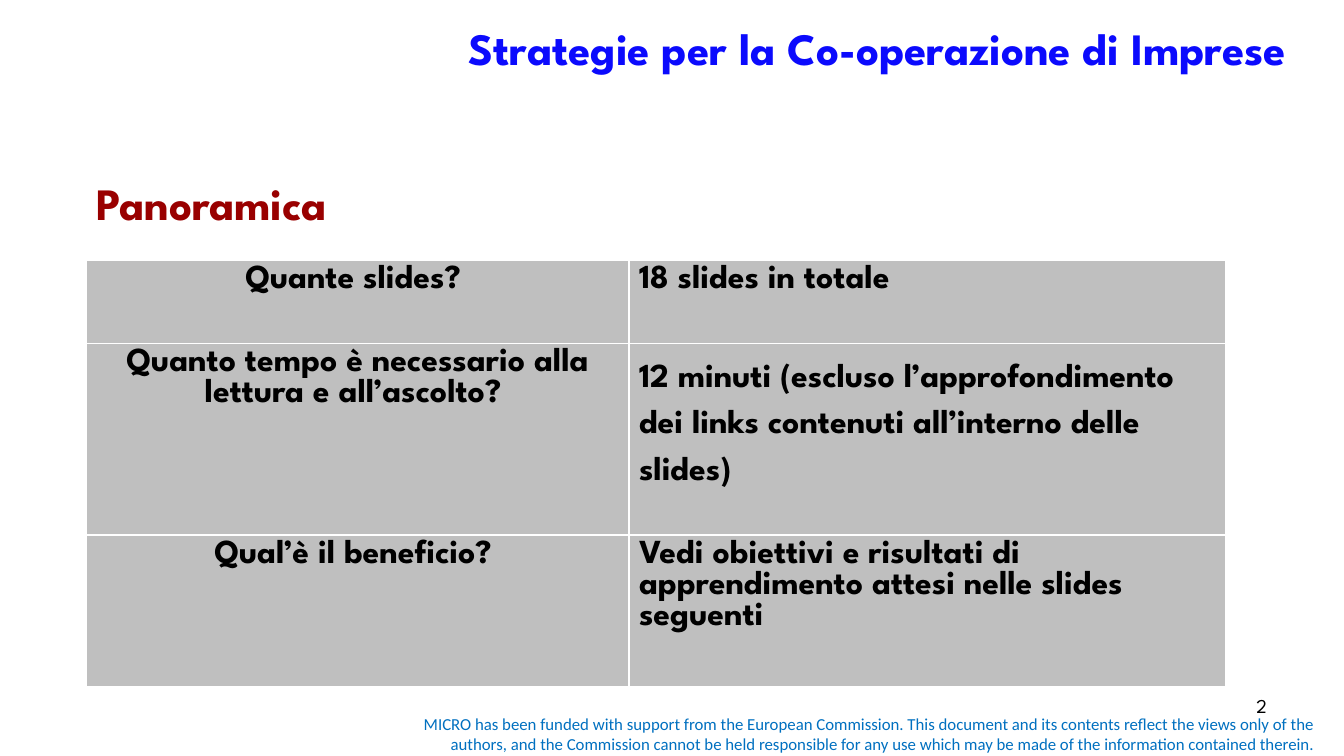
from lxml import etree
from pptx import Presentation
from pptx import util as u
from pptx.dml.color import RGBColor
from pptx.enum import text
from pptx.oxml import ns

PX = 9525  # EMU in one px, 96 px to the inch
BLUE = RGBColor(0x0B, 0x0A, 0xFD)
RED = RGBColor(0x99, 0x00, 0x00)
SKY = RGBColor(0x00, 0x70, 0xC0)
GREY = RGBColor(0xBF, 0xBF, 0xBF)
BLACK = RGBColor(0, 0, 0)
WHITE = RGBColor(0xFF, 0xFF, 0xFF)
HEADING_FONT = "League Spartan"
NOTICE_FONT = "Calibri"

LEFT, CENTER, RIGHT = text.PP_ALIGN.LEFT, text.PP_ALIGN.CENTER, text.PP_ALIGN.RIGHT
MIDDLE, TOP = text.MSO_ANCHOR.MIDDLE, text.MSO_ANCHOR.TOP

COLUMNS = (517, 568)
ROWS = (
    (79, "Quante slides? ", "18 slides in totale", None),
    (142, "Quanto tempo è necessario alla lettura e all’ascolto? ",
     "12 minuti (escluso l’approfondimento dei links contenuti all’interno delle slides)", 1.5),
    (144, "Qual’è il beneficio? ",
     "Vedi obiettivi e risultati di apprendimento attesi nelle slides seguenti", None),
)
NOTICE = ("MICRO has been funded with support from the European Commission. This document and its "
          "contents reflect the views only of the authors, and the Commission cannot be held "
          "responsible for any use which may be made of the information contained therein.")


def write(frame, words, size, color, align=LEFT, bold=False, font=HEADING_FONT):
    para = frame.paragraphs[0]
    para.alignment = align
    span = para.add_run()
    span.text = words
    span.font.name = font
    span.font.size = u.Pt(size)
    span.font.bold = bold
    span.font.color.rgb = color
    return para


def add_text(page, area, words, size, color, anchor=TOP, **style):
    box = page.shapes.add_textbox(*(side * PX for side in area))
    frame = box.text_frame
    frame.word_wrap = True
    frame.vertical_anchor = anchor
    write(frame, words, size, color, **style)
    return frame


def add_title(page, area):
    frame = add_text(page, area, "Strategie per la Co-operazione di Imprese", 32, BLUE,
                     anchor=MIDDLE, align=RIGHT, bold=True)
    frame.margin_right = 35 * PX
    frame.margin_bottom = 34 * PX


def outline(cell, color, points):
    properties = cell._tc.get_or_add_tcPr()
    for index, side in enumerate(("a:lnL", "a:lnR", "a:lnT", "a:lnB")):
        line = etree.Element(ns.qn(side), w=str(u.Pt(points)))
        fill = etree.SubElement(line, ns.qn("a:solidFill"))
        etree.SubElement(fill, ns.qn("a:srgbClr"), val=str(color))
        properties.insert(index, line)


def add_overview(page, left, top):
    height = sum(row[0] for row in ROWS)
    table = page.shapes.add_table(len(ROWS), len(COLUMNS), left * PX, top * PX,
                                  sum(COLUMNS) * PX, height * PX).table
    for column, width in zip(table.columns, COLUMNS):
        column.width = width * PX
    for index, (row_height, question, answer, spacing) in enumerate(ROWS):
        table.rows[index].height = row_height * PX
        for column, (words, align) in enumerate(((question, CENTER), (answer, LEFT))):
            cell = table.cell(index, column)
            cell.fill.solid()
            cell.fill.fore_color.rgb = GREY
            outline(cell, WHITE, 1)
            para = write(cell.text_frame, words, 24, BLACK, align=align, bold=True)
            if column == 1 and spacing:
                para.line_spacing = spacing


def add_footer(page, notice_area, number_area):
    add_text(page, notice_area, NOTICE, 12, SKY, anchor=MIDDLE, align=RIGHT, font=NOTICE_FONT)
    add_text(page, number_area, "2", 14, BLACK, align=RIGHT)


def main():
    deck = Presentation()
    deck.slide_width, deck.slide_height = 1280 * PX, 720 * PX
    page = deck.slides.add_slide(deck.slide_layouts[6])
    add_title(page, (109, 0, 1152, 120))
    add_text(page, (82, 163, 278, 61), "Panoramica", 32, RED, bold=True)
    add_overview(page, 82, 248)
    add_footer(page, (360, 675, 902, 48), (918, 656, 298, 50))
    deck.save("out.pptx")


if __name__ == "__main__":
    main()
